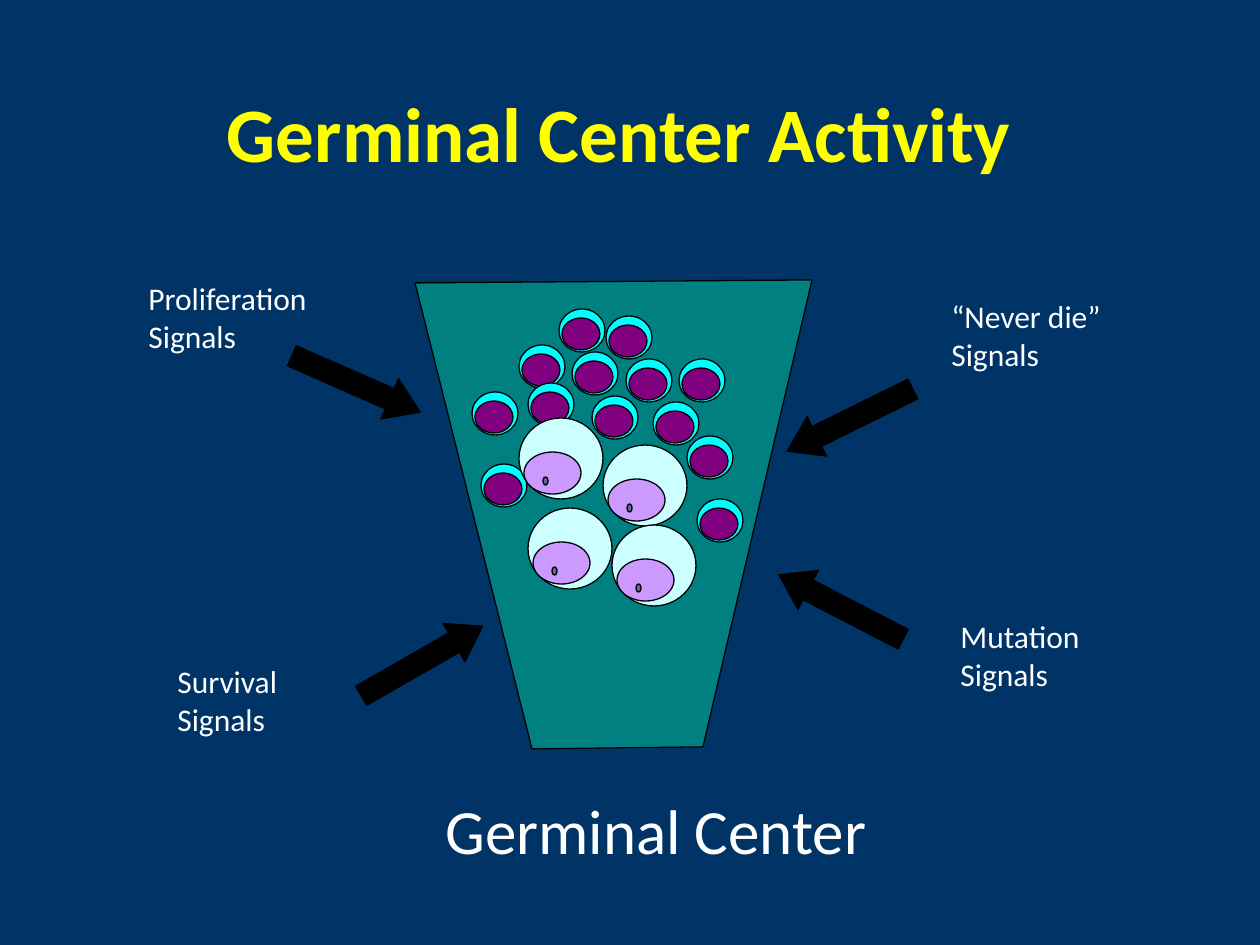
"""Build the Germinal Center Activity slide."""
from typing import NamedTuple

import pptx
import pptx.dml.color
import pptx.enum.shapes
import pptx.enum.text
import pptx.util

EMU_PER_PX = 914400 / 126
FONT = "Calibri"
OVAL = pptx.enum.shapes.MSO_SHAPE.OVAL
RIGHT_ARROW = pptx.enum.shapes.MSO_SHAPE.RIGHT_ARROW


class Box(NamedTuple):
    left: int
    top: int
    width: int
    height: int


class CellPart(NamedTuple):
    offset: Box
    color: str


class Signal(NamedTuple):
    lines: list[str]
    label: Box
    arrow: Box
    angle: float


LYMPHOCYTE = [
    CellPart(Box(0, 0, 46, 43), "00FFFF"),
    CellPart(Box(3, 9, 38, 32), "800080"),
]
CENTROBLAST = [
    CellPart(Box(0, 0, 84, 81), "CCFFFF"),
    CellPart(Box(5, 34, 57, 42), "CC99FF"),
    CellPart(Box(24, 59, 5, 8), "666699"),
]
LYMPHOCYTE_SPOTS = [
    (519, 345), (697, 499), (472, 392), (592, 396), (653, 402), (559, 309), (572, 352),
    (626, 359), (606, 316), (687, 436), (679, 359), (528, 383), (481, 464),
]
CENTROBLAST_SPOTS = [(519, 418), (603, 445), (528, 508), (612, 525)]
CENTER_OUTLINE = [(415, 283), (532, 749), (703, 747), (812, 280)]
SIGNALS = [
    Signal(["Proliferation", "Signals"], Box(136, 273, 198, 89), Box(286, 362, 140, 44), 23.7),
    Signal(["Survival", "Signals"], Box(165, 656, 126, 89), Box(352, 639, 140, 44), 330.2),
    Signal(["“Never die”", "Signals"], Box(939, 291, 176, 89), Box(780, 398, 140, 44), 153.7),
    Signal(["Mutation", "Signals"], Box(948, 611, 146, 89), Box(771, 585, 140, 44), 207.4),
]


def px(length: int) -> pptx.util.Emu:
    """Turn pixels into EMU."""
    return pptx.util.Emu(round(length * EMU_PER_PX))


def rgb(code: str) -> pptx.dml.color.RGBColor:
    """Turn a hex string into a colour."""
    return pptx.dml.color.RGBColor.from_string(code)


def paint(shape, color: str) -> None:
    """Give a shape a flat fill and a thin black line."""
    shape.shadow.inherit = False
    shape.fill.solid()
    shape.fill.fore_color.rgb = rgb(color)
    shape.line.color.rgb = rgb("000000")
    shape.line.width = pptx.util.Pt(0.75)


def add_preset(slide, preset, box: Box, color: str):
    """Add a painted preset shape."""
    shape = slide.shapes.add_shape(preset, *map(px, box))
    paint(shape, color)
    return shape


def add_cell(slide, parts: list[CellPart], left: int, top: int) -> None:
    """Draw a cell from its outer membrane inward."""
    for offset, color in parts:
        box = Box(left + offset.left, top + offset.top, offset.width, offset.height)
        add_preset(slide, OVAL, box, color)


def write(frame, lines: list[str], size: int, color: str, bold: bool = False) -> None:
    """Write one paragraph for each line."""
    for index, line in enumerate(lines):
        paragraph = frame.add_paragraph() if index else frame.paragraphs[0]
        run = paragraph.add_run()
        run.text = line
        run.font.name = FONT
        run.font.size = pptx.util.Pt(size)
        run.font.bold = bold
        run.font.color.rgb = rgb(color)


def add_label(slide, lines: list[str], box: Box, size: int, wrap: bool) -> None:
    """Add a white text label."""
    frame = slide.shapes.add_textbox(*map(px, box)).text_frame
    frame.word_wrap = wrap
    write(frame, lines, size, "FFFFFF")


def add_signal(slide, signal: Signal) -> None:
    """Add a signal's label and the arrow toward the center."""
    add_label(slide, signal.lines, signal.label, 18, False)
    arrow = add_preset(slide, RIGHT_ARROW, signal.arrow, "000000")
    arrow.adjustments[0] = 0.5
    arrow.adjustments[1] = 0.75
    arrow.rotation = signal.angle


def add_title(slide, text: str, box: Box) -> None:
    """Place and format the title placeholder."""
    title = slide.shapes.title
    title.left, title.top, title.width, title.height = map(px, box)
    frame = title.text_frame
    frame.word_wrap = True
    frame.vertical_anchor = pptx.enum.text.MSO_ANCHOR.MIDDLE
    frame.paragraphs[0].alignment = pptx.enum.text.PP_ALIGN.CENTER
    write(frame, [text], 44, "FFFF00", True)


def main() -> None:
    """Build and save the slide."""
    deck = pptx.Presentation()
    deck.slide_width, deck.slide_height = px(1260), px(945)
    slide = deck.slides.add_slide(deck.slide_layouts[5])
    slide.background.fill.solid()
    slide.background.fill.fore_color.rgb = rgb("003366")
    add_title(slide, "Germinal Center Activity", Box(84, 53, 1071, 158))

    outline = slide.shapes.build_freeform(*CENTER_OUTLINE[0], scale=EMU_PER_PX)
    outline.add_line_segments(CENTER_OUTLINE[1:], close=True)
    paint(outline.convert_to_shape(), "008080")

    for spot in LYMPHOCYTE_SPOTS:
        add_cell(slide, LYMPHOCYTE, *spot)
    for spot in CENTROBLAST_SPOTS:
        add_cell(slide, CENTROBLAST, *spot)
    add_label(slide, ["Germinal Center"], Box(433, 785, 450, 88), 36, True)
    for signal in SIGNALS:
        add_signal(slide, signal)
    deck.save("out.pptx")


if __name__ == "__main__":
    main()
